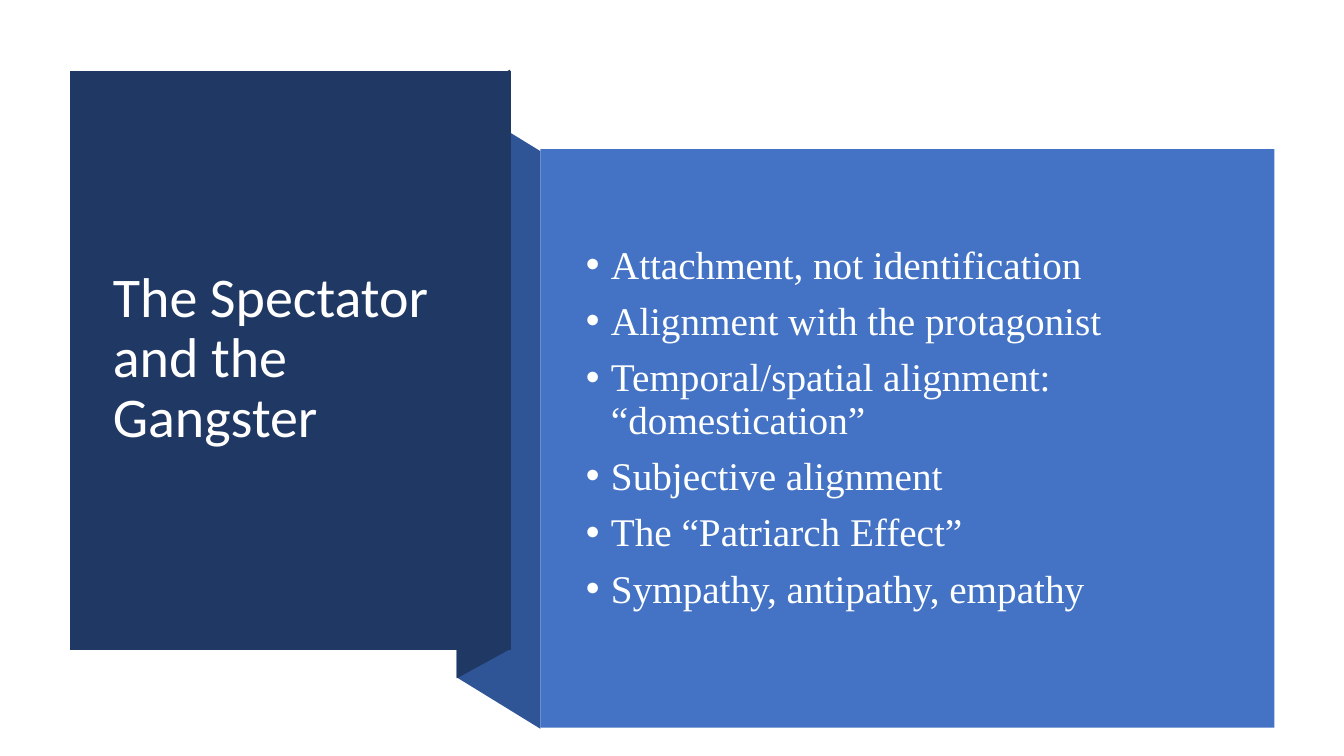
from dataclasses import dataclass

from pptx import Presentation
from pptx.dml.color import RGBColor
from pptx.enum.shapes import MSO_SHAPE
from pptx.enum.text import MSO_ANCHOR, MSO_AUTO_SIZE, PP_ALIGN
from pptx.oxml.ns import qn
from pptx.util import Inches, Pt

TITLE = "The Spectator and the Gangster"
POINTS = [
    "Attachment, not identification",
    "Alignment with the protagonist",
    "Temporal/spatial alignment: “domestication”",
    "Subjective alignment",
    "The “Patriarch Effect”",
    "Sympathy, antipathy, empathy",
]


@dataclass(frozen=True)
class Theme:
    navy: str = "203864"
    fold: str = "2F5597"
    blue: str = "4472C4"
    title_color: str = "FFFFFF"
    body_color: str = "FEFFFF"
    title_font: str = "Calibri"
    body_font: str = "Times New Roman"
    title_size: int = 40
    body_size: int = 28


THEME = Theme()
TITLE_BOX = (1.02, 1.07, 3.71, 4.99)
BODY_BOX = (5.71, 1.88, 6.51, 4.74)
BODY_PANEL = (5.36, 1.48, 7.28, 5.74)
RIBBON = [
    (THEME.fold, [(5.36, 7.23), (4.53, 6.72), (4.53, 0.99), (5.36, 1.5)]),
    (THEME.navy, [(5.06, 6.44), (4.53, 6.73), (4.53, 0.98), (5.06, 0.69)]),
    (THEME.navy, [(0.69, 0.7), (5.07, 0.7), (5.07, 6.45), (0.69, 6.45)]),
]


def paint(shape, color):
    shape.shadow.inherit = False
    shape.fill.solid()
    shape.fill.fore_color.rgb = RGBColor.from_string(color)
    shape.line.fill.background()


def add_outline(slide, color, corners):
    start, *others = [(Inches(x), Inches(y)) for x, y in corners]
    builder = slide.shapes.build_freeform(*start)
    builder.add_line_segments(others, close=True)
    paint(builder.convert_to_shape(), color)


def write_text(shape, lines, *, box, font, size, color, space_before=0, indent=None):
    shape.left, shape.top, shape.width, shape.height = map(Inches, box)
    shape.element.getparent().append(shape.element)
    frame = shape.text_frame
    frame.text = "\n".join(lines)
    frame.word_wrap = True
    frame.auto_size = MSO_AUTO_SIZE.NONE
    frame.vertical_anchor = MSO_ANCHOR.MIDDLE
    for paragraph in frame.paragraphs:
        paragraph.alignment = PP_ALIGN.LEFT
        paragraph.line_spacing = 0.9
        paragraph.space_before = Pt(space_before)
        for run in paragraph.runs:
            run.font.name = font
            run.font.size = Pt(size)
            run.font.color.rgb = RGBColor.from_string(color)
    if indent:
        for properties in shape.element.iter(qn("a:pPr")):
            properties.set("marL", str(Inches(indent)))
            properties.set("indent", str(-Inches(indent)))


def main():
    presentation = Presentation()
    presentation.slide_width = Inches(13.33)
    presentation.slide_height = Inches(7.5)
    slide = presentation.slides.add_slide(presentation.slide_layouts[1])
    title, body = slide.placeholders

    for color, corners in RIBBON:
        add_outline(slide, color, corners)
    write_text(title, [TITLE], box=TITLE_BOX, font=THEME.title_font,
               size=THEME.title_size, color=THEME.title_color)

    panel = slide.shapes.add_shape(MSO_SHAPE.RECTANGLE, *map(Inches, BODY_PANEL))
    paint(panel, THEME.blue)
    write_text(body, POINTS, box=BODY_BOX, font=THEME.body_font,
               size=THEME.body_size, color=THEME.body_color,
               space_before=10, indent=0.25)
    presentation.save("out.pptx")


if __name__ == "__main__":
    main()
